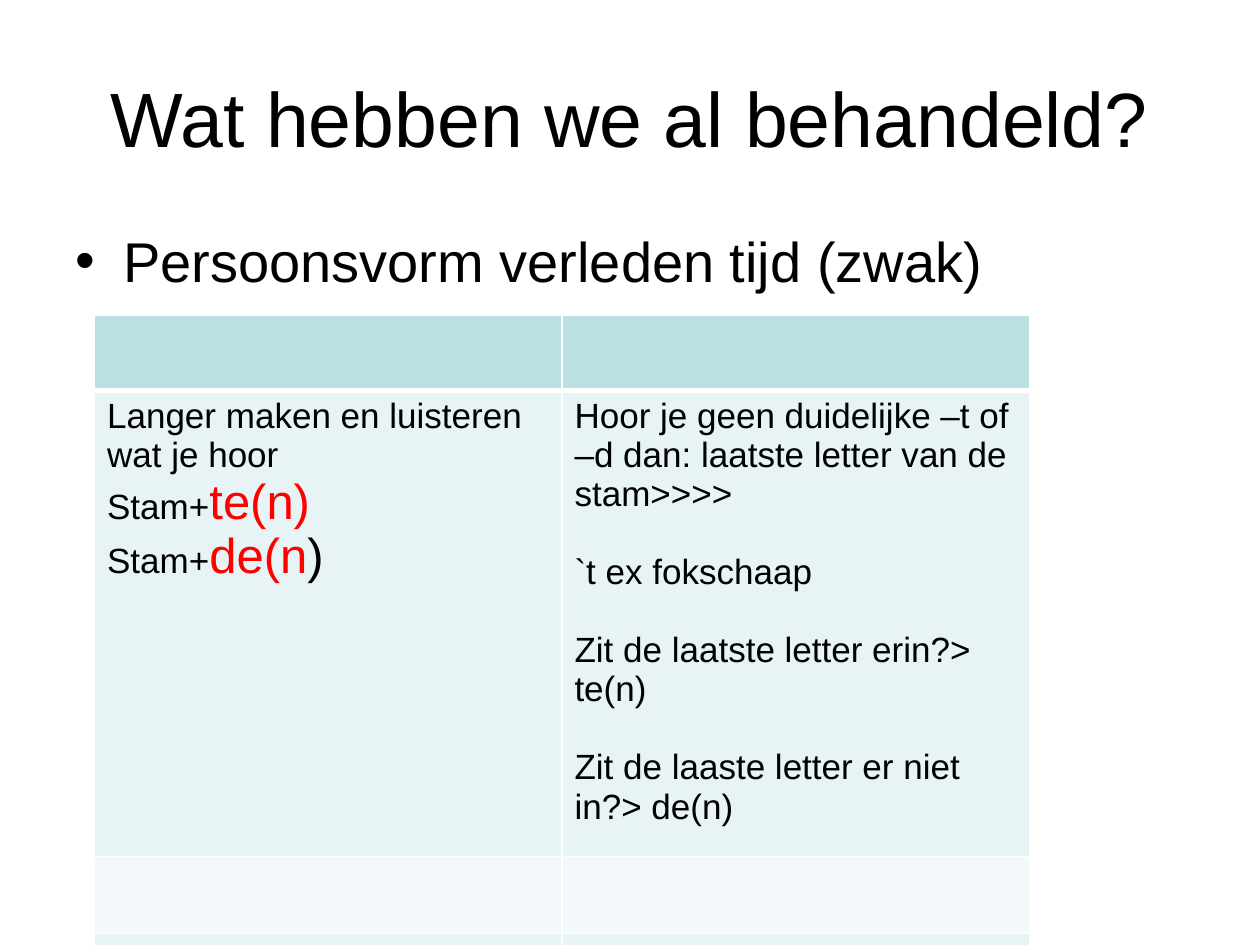
"""Build the slide about the weak past tense in Dutch."""
from lxml.etree import SubElement
from pptx import Presentation
from pptx.dml.color import RGBColor
from pptx.enum.text import MSO_ANCHOR, PP_ALIGN
from pptx.oxml.ns import qn
from pptx.util import Inches, Pt

BLACK = RGBColor(0x00, 0x00, 0x00)
RED = RGBColor(0xFF, 0x00, 0x00)
WHITE = RGBColor(0xFF, 0xFF, 0xFF)
HEADER = RGBColor(0xBB, 0xE0, 0xE3)
BAND_DARK = RGBColor(0xE7, 0xF3, 0xF4)
BAND_LIGHT = RGBColor(0xF3, 0xF9, 0xFA)

TITLE = "Wat hebben we al behandeld?"
BULLET = "Persoonsvorm verleden tijd (zwak)"
LISTEN = [
    [("Langer maken en luisteren wat je hoor", 20, BLACK)],
    [("Stam+", 20, BLACK), ("te(n)", 28, RED)],
    [("Stam+", 20, BLACK), ("de(n", 28, RED), (")", 28, BLACK)],
]
LAST_LETTER = [
    [(text, 20, BLACK)]
    for text in (
        "Hoor je geen duidelijke –t of –d dan: laatste letter van de stam>>>>",
        "`t ex fokschaap",
        "Zit de laatste letter erin?> te(n)",
        "Zit de laaste letter er niet in?> de(n)",
    )
]
ROWS = [
    (0.6, HEADER, None),
    (3.5, BAND_DARK, ((LISTEN, 0), (LAST_LETTER, 22.3))),
    (0.61, BAND_LIGHT, None),
    (0.61, BAND_DARK, None),
]
COLUMN_WIDTH = 3.71


def add_run(paragraph, text, size, color):
    run = paragraph.add_run()
    run.text = text
    run.font.name = "Arial"
    run.font.size = Pt(size)
    run.font.color.rgb = color


def add_text(slide, position, text, size):
    shape = slide.shapes.add_textbox(*(Inches(value) for value in position))
    shape.text_frame.word_wrap = True
    paragraph = shape.text_frame.paragraphs[0]
    add_run(paragraph, text, size, BLACK)
    return shape.text_frame, paragraph


def add_bullet(paragraph, indent):
    properties = paragraph._p.get_or_add_pPr()
    properties.set("marL", str(Inches(indent)))
    properties.set("indent", str(-Inches(indent)))
    SubElement(properties, qn("a:buFont"), typeface="Arial")
    SubElement(properties, qn("a:buChar"), char="•")


def set_borders(cell, top, bottom):
    properties = cell._tc.get_or_add_tcPr()
    for side, width in (("L", 1), ("R", 1), ("T", top), ("B", bottom)):
        line = SubElement(properties, qn(f"a:ln{side}"), w=str(Pt(width)))
        fill = SubElement(line, qn("a:solidFill"))
        SubElement(fill, qn("a:srgbClr"), val=str(WHITE))


def fill_cell(cell, paragraphs, gap):
    for index, runs in enumerate(paragraphs):
        frame = cell.text_frame
        paragraph = frame.add_paragraph() if index else frame.paragraphs[0]
        paragraph.space_before = Pt(gap if index else 0)
        for run in runs:
            add_run(paragraph, *run)


def add_rules_table(slide):
    height = sum(row[0] for row in ROWS)
    table = slide.shapes.add_table(
        len(ROWS), 2, Inches(0.75), Inches(2.5), Inches(2 * COLUMN_WIDTH), Inches(height)
    ).table
    for column in table.columns:
        column.width = Inches(COLUMN_WIDTH)
    for row_index, (row_height, color, contents) in enumerate(ROWS):
        table.rows[row_index].height = Inches(row_height)
        for column_index in range(2):
            cell = table.cell(row_index, column_index)
            set_borders(cell, 3 if row_index == 1 else 1, 3 if row_index == 0 else 1)
            cell.fill.solid()
            cell.fill.fore_color.rgb = color
            if contents:
                fill_cell(cell, *contents[column_index])


def main():
    presentation = Presentation()
    presentation.slide_width = Inches(10)
    presentation.slide_height = Inches(7.5)
    slide = presentation.slides.add_slide(presentation.slide_layouts[6])

    title_frame, title = add_text(slide, (0.5, 0.3, 9, 1.25), TITLE, 44)
    title_frame.vertical_anchor = MSO_ANCHOR.MIDDLE
    title.alignment = PP_ALIGN.CENTER

    bullet = add_text(slide, (0.5, 1.75, 9, 4.95), BULLET, 32)[1]
    bullet.space_before = Pt(6.4)
    add_bullet(bullet, 0.38)

    add_rules_table(slide)
    presentation.save("out.pptx")


if __name__ == "__main__":
    main()
